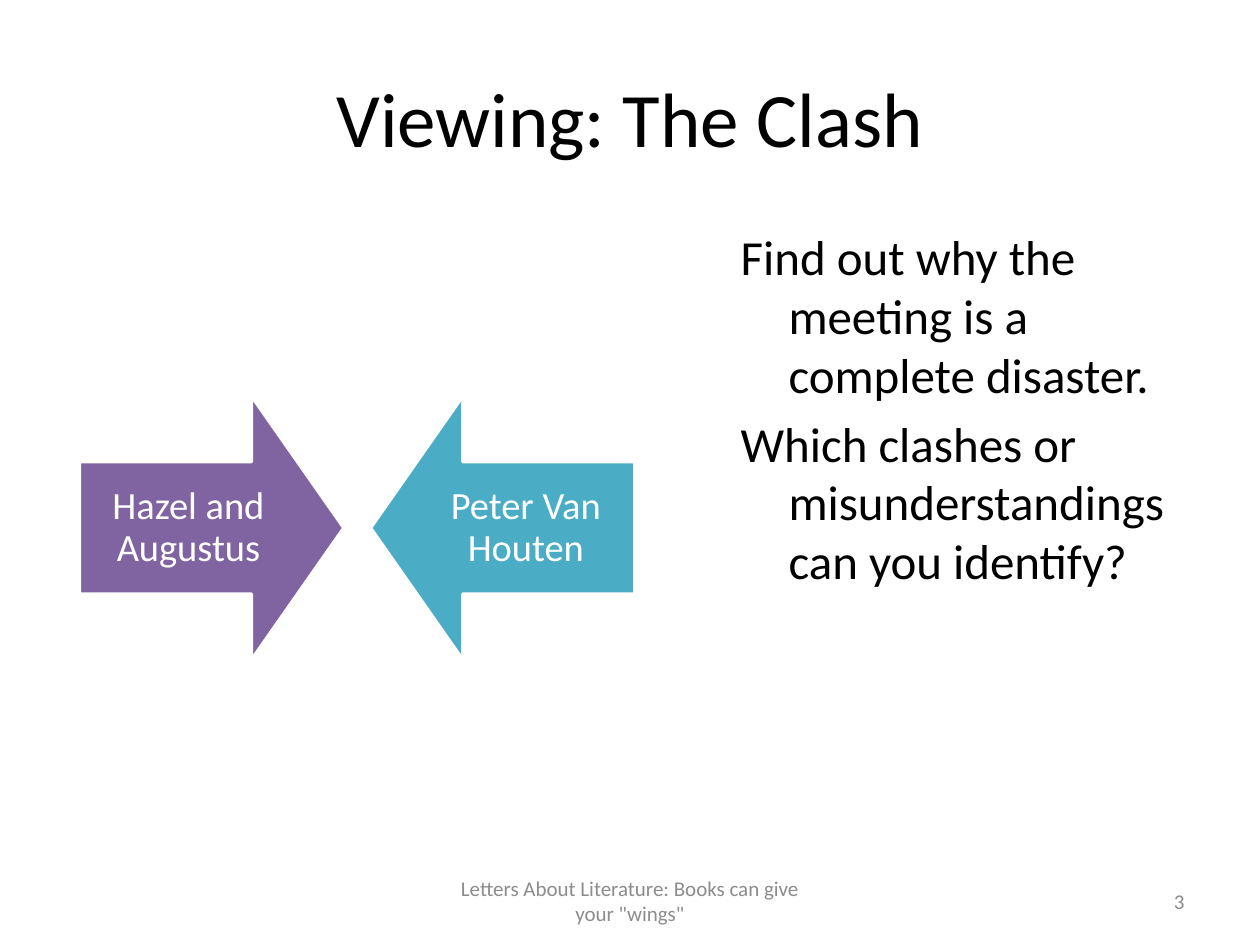
from pptx import Presentation
from pptx.dml.color import RGBColor
from pptx.enum.shapes import MSO_SHAPE
from pptx.enum.text import MSO_ANCHOR, PP_ALIGN
from pptx.util import Inches, Pt

BLACK = RGBColor(0x00, 0x00, 0x00)
WHITE = RGBColor(0xFF, 0xFF, 0xFF)
GRAY = RGBColor(0x8C, 0x8C, 0x8C)
PURPLE = RGBColor(0x80, 0x64, 0xA2)
TEAL = RGBColor(0x4B, 0xAC, 0xC6)

presentation = Presentation()
presentation.slide_width = Inches(10)
presentation.slide_height = Inches(7.5)
slide = presentation.slides.add_slide(presentation.slide_layouts[6])

MARGIN = 0.5
RIGHT_EDGE = 10 - MARGIN
FOOTER_TOP, FOOTER_HEIGHT = 6.95, 0.4


def write(shape, text, size, color, alignment, anchor=MSO_ANCHOR.MIDDLE):
    """Fill a shape with wrapped text, one paragraph per line of text."""
    text_frame = shape.text_frame
    text_frame.word_wrap = True
    text_frame.vertical_anchor = anchor
    text_frame.text = text
    for paragraph in text_frame.paragraphs:
        paragraph.alignment = alignment
        for run in paragraph.runs:
            run.font.name = "Calibri"
            run.font.size = Pt(size)
            run.font.color.rgb = color
    return text_frame


def add_text(left, top, width, height, *style):
    box = slide.shapes.add_textbox(
        Inches(left), Inches(top), Inches(width), Inches(height))
    return write(box, *style)


add_text(MARGIN, 0.3, 10 - 2 * MARGIN, 1.25,
         "Viewing: The Clash", 44, BLACK, PP_ALIGN.CENTER)

# Two arrows that meet head to head
ARROW_SIZE, ARROW_GAP = 2.1, 0.21
arrows = [
    (MSO_SHAPE.RIGHT_ARROW, PURPLE, "Hazel and Augustus"),
    (MSO_SHAPE.LEFT_ARROW, TEAL, "Peter Van Houten"),
]
for column, (kind, color, label) in enumerate(arrows):
    left = 0.63 + column * (ARROW_SIZE + ARROW_GAP)
    arrow = slide.shapes.add_shape(
        kind, Inches(left), Inches(3.14), Inches(ARROW_SIZE), Inches(ARROW_SIZE))
    arrow.adjustments[0] = 0.5
    arrow.adjustments[1] = 0.35
    arrow.shadow.inherit = False
    arrow.fill.solid()
    arrow.fill.fore_color.rgb = color
    arrow.line.color.rgb = WHITE
    arrow.line.width = Pt(2)
    text_frame = write(arrow, label, 22, WHITE, PP_ALIGN.CENTER)
    text_frame.margin_left = text_frame.margin_right = Inches(0.17)
    text_frame.margin_top = text_frame.margin_bottom = Inches(0.17)
    text_frame.paragraphs[0].line_spacing = 0.9

questions = add_text(
    5.78, 1.75, RIGHT_EDGE - 5.78, 4.95,
    "Find out why the meeting is a complete disaster.\n"
    "Which clashes or misunderstandings can you identify?",
    28, BLACK, PP_ALIGN.LEFT, MSO_ANCHOR.TOP)
for paragraph in questions.paragraphs:
    paragraph.space_before = Pt(0.2 * 28)
    properties = paragraph._p.get_or_add_pPr()
    properties.set("marL", str(Inches(0.38)))
    properties.set("indent", str(Inches(-0.38)))

add_text(RIGHT_EDGE - 2.33, FOOTER_TOP, 2.33, FOOTER_HEIGHT,
         "3", 12, GRAY, PP_ALIGN.RIGHT)
add_text((10 - 3.17) / 2, FOOTER_TOP, 3.17, FOOTER_HEIGHT,
         'Letters About Literature: Books can give your "wings"',
         12, GRAY, PP_ALIGN.CENTER)

presentation.save("out.pptx")
